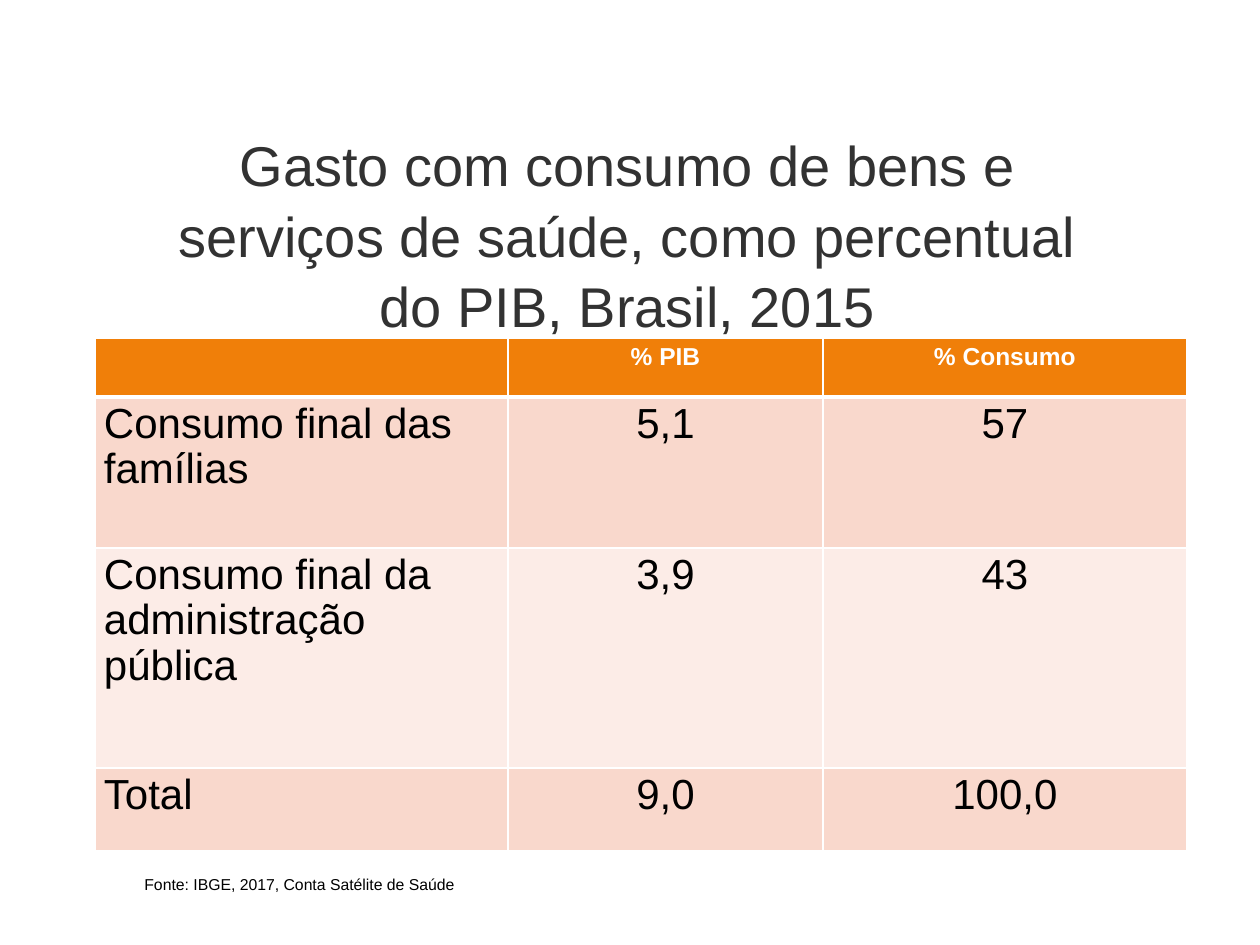
from lxml.etree import SubElement
from pptx import Presentation
from pptx.dml.color import RGBColor
from pptx.enum.text import MSO_ANCHOR, MSO_AUTO_SIZE, PP_ALIGN
from pptx.oxml.ns import qn
from pptx.util import Pt

PX = 914400 / 126
WHITE = RGBColor(0xFF, 0xFF, 0xFF)
BLACK = RGBColor(0x00, 0x00, 0x00)
TITLE_GREY = RGBColor(0x32, 0x32, 0x32)
ORANGE = RGBColor(0xF0, 0x7F, 0x09)
BANDS = [RGBColor(0xFC, 0xEC, 0xE7), RGBColor(0xF9, 0xD8, 0xCC)]

COL_WIDTHS = [413, 315, 364]
ROW_HEIGHTS = [59, 151, 220, 83]
ROWS = [
    ["", "% PIB", "% Consumo"],
    ["Consumo final das famílias", "5,1", "57"],
    ["Consumo final da administração pública", "3,9", "43"],
    ["Total", "9,0", "100,0"],
]


def px(*values):
    return [round(v * PX) for v in values]


def set_borders(cell, widths):
    """Draw white cell borders; widths maps a side (L, R, T, B) to points."""
    tc_pr = cell._tc.get_or_add_tcPr()
    for i, (side, width) in enumerate(widths.items()):
        ln = SubElement(tc_pr, qn(f"a:ln{side}"), w=str(Pt(width)))
        tc_pr.insert(i, ln)  # borders come before the fill
        fill = SubElement(ln, qn("a:solidFill"))
        SubElement(fill, qn("a:srgbClr"), val=str(WHITE))


prs = Presentation()
prs.slide_width, prs.slide_height = px(1260, 945)
s = prs.slides.add_slide(prs.slide_layouts[5])

title = s.shapes.title
title.left, title.top, title.width, title.height = px(134, 185, 987, 96)
tf = title.text_frame
tf.text = "Gasto com consumo de bens e serviços de saúde, como percentual do PIB, Brasil, 2015"
tf.auto_size = MSO_AUTO_SIZE.NONE
tf.vertical_anchor = MSO_ANCHOR.MIDDLE
p = tf.paragraphs[0]
p.alignment = PP_ALIGN.CENTER
p.line_spacing = 1.05
font = p.runs[0].font
font.name, font.size = "Arial", Pt(32)
font.color.rgb = TITLE_GREY

table = s.shapes.add_table(
    len(ROWS), len(COL_WIDTHS),
    *px(95, 338, sum(COL_WIDTHS), sum(ROW_HEIGHTS))).table
for column, width in zip(table.columns, px(*COL_WIDTHS)):
    column.width = width
for row, height in zip(table.rows, px(*ROW_HEIGHTS)):
    row.height = height

for i, texts in enumerate(ROWS):
    header = i == 0
    for j, text in enumerate(texts):
        cell = table.cell(i, j)
        cell.margin_left, cell.margin_right, cell.margin_top, cell.margin_bottom = px(9, 9, 5, 5)
        cell.fill.solid()
        cell.fill.fore_color.rgb = ORANGE if header else BANDS[i % 2]
        set_borders(cell, {"L": 1, "R": 1, "T": 3 if i == 1 else 1, "B": 3 if header else 1})
        if not text:
            continue
        cell.text_frame.text = text
        p = cell.text_frame.paragraphs[0]
        p.alignment = PP_ALIGN.CENTER if j else PP_ALIGN.LEFT
        p.line_spacing = 1.0 if header else 0.97
        font = p.runs[0].font
        font.name, font.size, font.bold = "Arial", Pt(14 if header else 24), header
        font.color.rgb = WHITE if header else BLACK

source = s.shapes.add_textbox(*px(132, 869, 398, 32))
tf = source.text_frame
tf.word_wrap = True
tf.auto_size = MSO_AUTO_SIZE.SHAPE_TO_FIT_TEXT
tf.text = "Fonte: IBGE, 2017, Conta Satélite de Saúde"
font = tf.paragraphs[0].runs[0].font
font.name, font.size = "Arial", Pt(9)
font.color.rgb = BLACK

prs.save("out.pptx")
